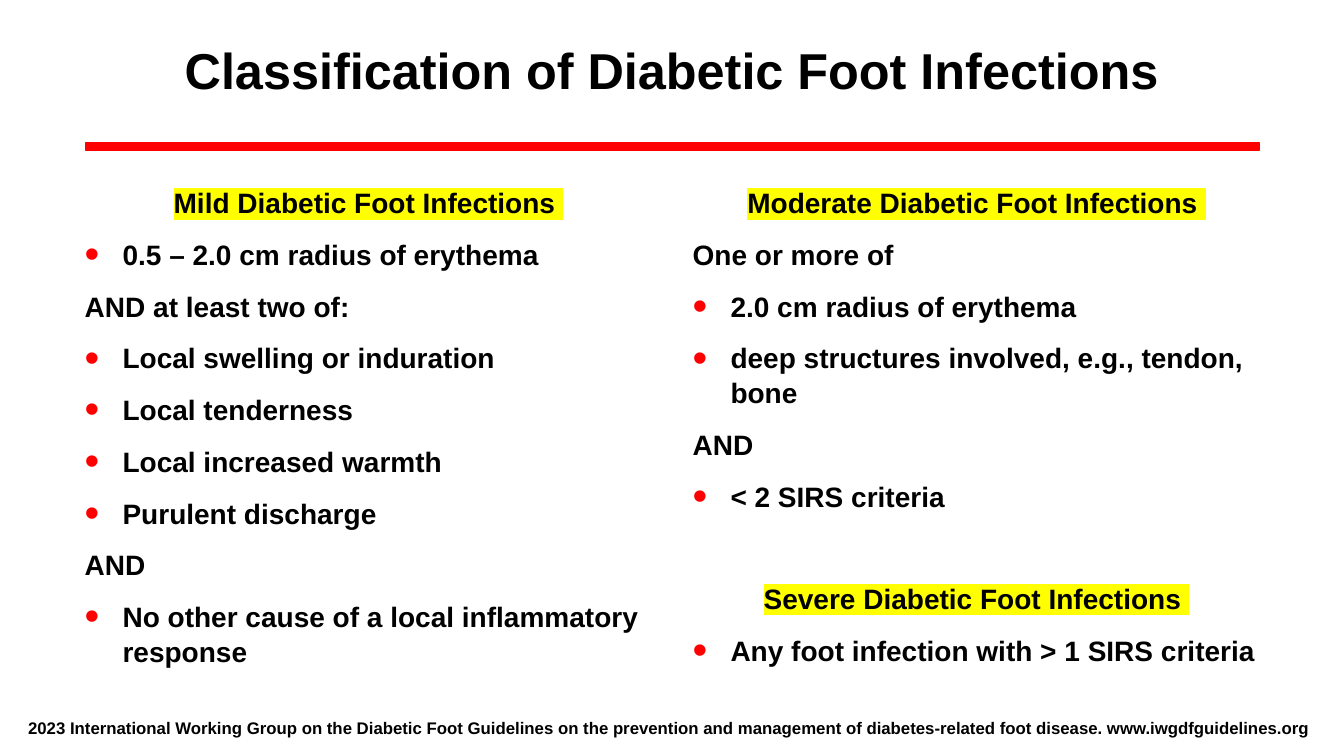
"""Build the slide on the classification of diabetic foot infections."""
from lxml.etree import SubElement
from pptx import Presentation
from pptx.dml.color import RGBColor
from pptx.enum.shapes import MSO_SHAPE
from pptx.enum.text import MSO_ANCHOR, MSO_AUTO_SIZE, PP_ALIGN
from pptx.oxml.ns import qn
from pptx.util import Inches, Pt


def rgb(color):
    return RGBColor.from_string(color)


def write(p, text, size=20, align=PP_ALIGN.LEFT, before=0, after=0, spacing=1.0,
          bullet=False, highlight=None):
    p.alignment, p.line_spacing = align, spacing
    p.space_before, p.space_after = Pt(before), Pt(after)
    pPr = p._p.get_or_add_pPr()
    indent = Inches(0.375) if bullet else 0
    pPr.set("marL", str(indent))
    pPr.set("indent", str(-indent))
    if bullet:
        SubElement(SubElement(pPr, qn("a:buClr")), qn("a:srgbClr"), val="FF0000")
        SubElement(pPr, qn("a:buSzPct"), val="150000")
        SubElement(pPr, qn("a:buFont"), typeface="Arial")
        SubElement(pPr, qn("a:buChar"), char="•")
    else:
        SubElement(pPr, qn("a:buNone"))
    r = p.add_run()
    r.text = text
    r.font.size, r.font.bold = Pt(size), True
    r.font.color.rgb = rgb("000000")
    if highlight:
        mark = SubElement(r._r.get_or_add_rPr(), qn("a:highlight"))
        SubElement(mark, qn("a:srgbClr"), val=highlight)
    r.font.name = "Arial"


prs = Presentation()
prs.slide_width, prs.slide_height = Inches(13.33), Inches(7.5)
s = prs.slides.add_slide(prs.slide_layouts[3])

LEFT, COL_W, COL_STEP = 0.74, 5.83, 6.03

rule = s.shapes.add_shape(MSO_SHAPE.RECTANGLE, Inches(0.85), Inches(1.42),
                          Inches(11.64), Inches(0.07))
rule.shadow.inherit = False
rule.fill.solid()
rule.fill.fore_color.rgb = rgb("FF0000")
rule.line.color.rgb = rgb("FF0000")
rule.line.width = Pt(1)

title = s.shapes.title
title.left, title.top = Inches(LEFT), Inches(0.08)
title.width, title.height = Inches(11.85), Inches(1.22)
tf = title.text_frame
tf.auto_size, tf.vertical_anchor = MSO_AUTO_SIZE.NONE, MSO_ANCHOR.MIDDLE
write(tf.paragraphs[0], "Classification of Diabetic Foot Infections", size=36,
      align=PP_ALIGN.CENTER)

HEAD = {"align": PP_ALIGN.CENTER, "highlight": "FFFF00"}
SECOND_HEAD = {**HEAD, "before": 36}
ITEM = {"bullet": True}
PLAIN = {}
columns = [
    [("Mild Diabetic Foot Infections ", HEAD),
     ("0.5 – 2.0 cm radius of erythema", ITEM),
     ("AND at least two of:", PLAIN),
     ("Local swelling or induration", ITEM),
     ("Local tenderness", ITEM),
     ("Local increased warmth", ITEM),
     ("Purulent discharge", ITEM),
     ("AND", PLAIN),
     ("No other cause of a local inflammatory response", ITEM)],
    [("Moderate Diabetic Foot Infections ", HEAD),
     ("One or more of", PLAIN),
     ("2.0 cm radius of erythema", ITEM),
     ("deep structures involved, e.g., tendon, bone", ITEM),
     ("AND", PLAIN),
     ("< 2 SIRS criteria", ITEM),
     ("Severe Diabetic Foot Infections ", SECOND_HEAD),
     ("Any foot infection with > 1 SIRS criteria", ITEM)],
]
for col, lines in enumerate(columns):
    body = s.placeholders[col + 1]
    body.left, body.top = Inches(LEFT + col * COL_STEP), Inches(1.78)
    body.width, body.height = Inches(COL_W), Inches(5.13)
    body.fill.solid()
    body.fill.fore_color.rgb = rgb("FFFFFF")
    tf = body.text_frame
    tf.auto_size = MSO_AUTO_SIZE.NONE
    for i, (text, style) in enumerate(lines):
        p = tf.add_paragraph() if i else tf.paragraphs[0]
        write(p, text, after=12, spacing=1.04, **style)

source = s.shapes.add_textbox(Inches(0.18), Inches(7.07), Inches(12.98), Inches(0.3))
tf = source.text_frame
tf.word_wrap, tf.auto_size = True, MSO_AUTO_SIZE.SHAPE_TO_FIT_TEXT
write(tf.paragraphs[0],
      "2023 International Working Group on the Diabetic Foot Guidelines on the prevention "
      "and management of diabetes-related foot disease. www.iwgdfguidelines.org", size=12)

prs.save("out.pptx")
